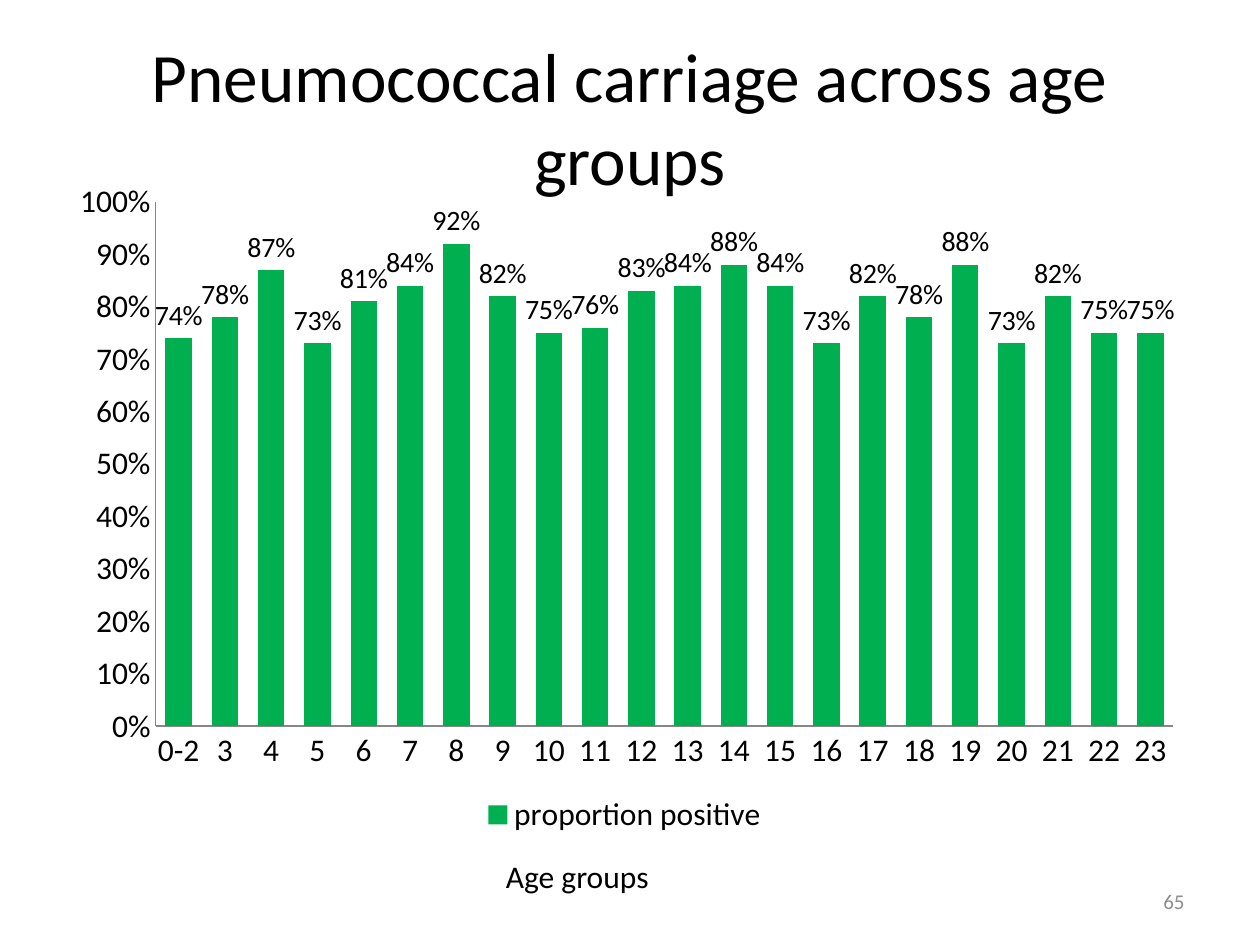
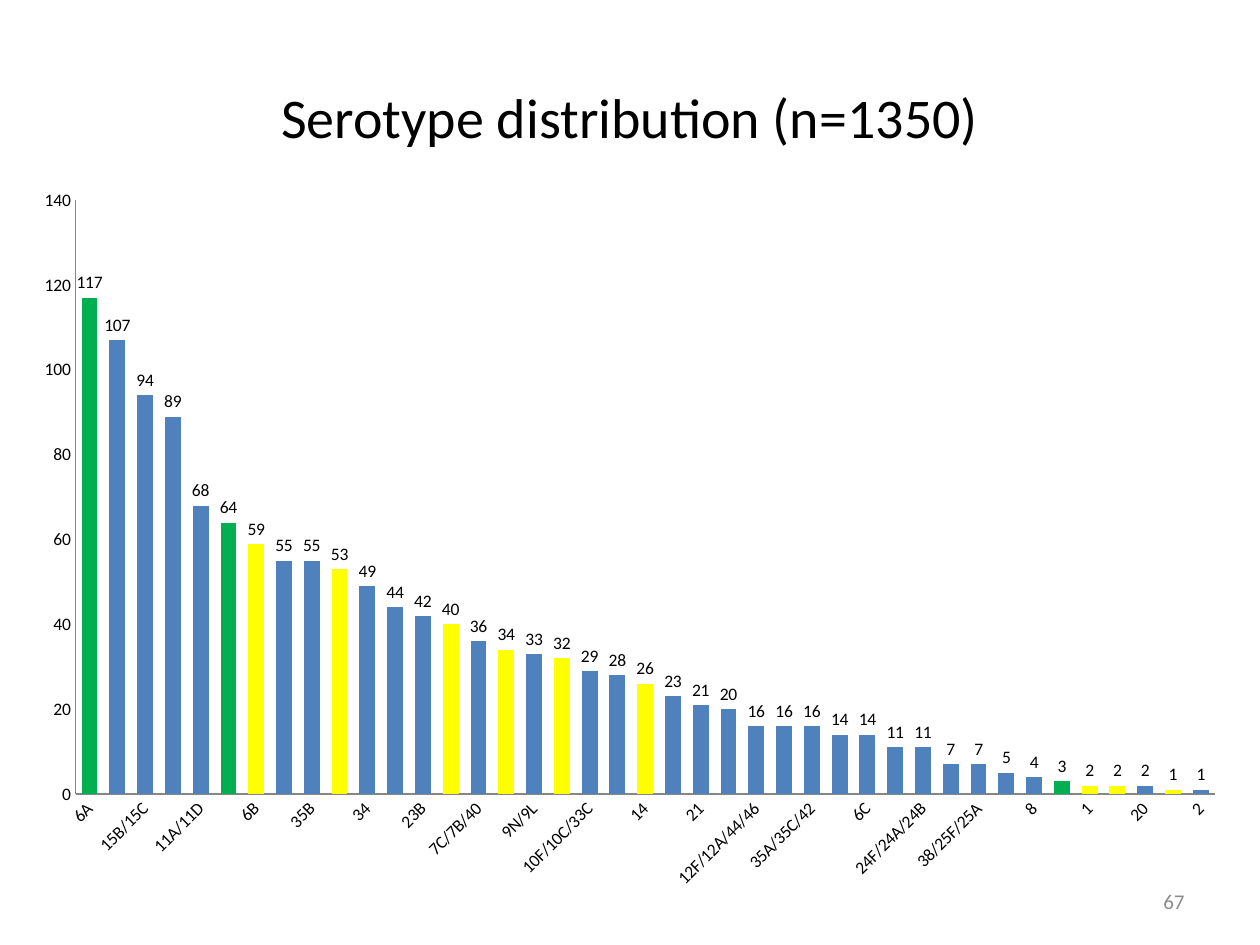
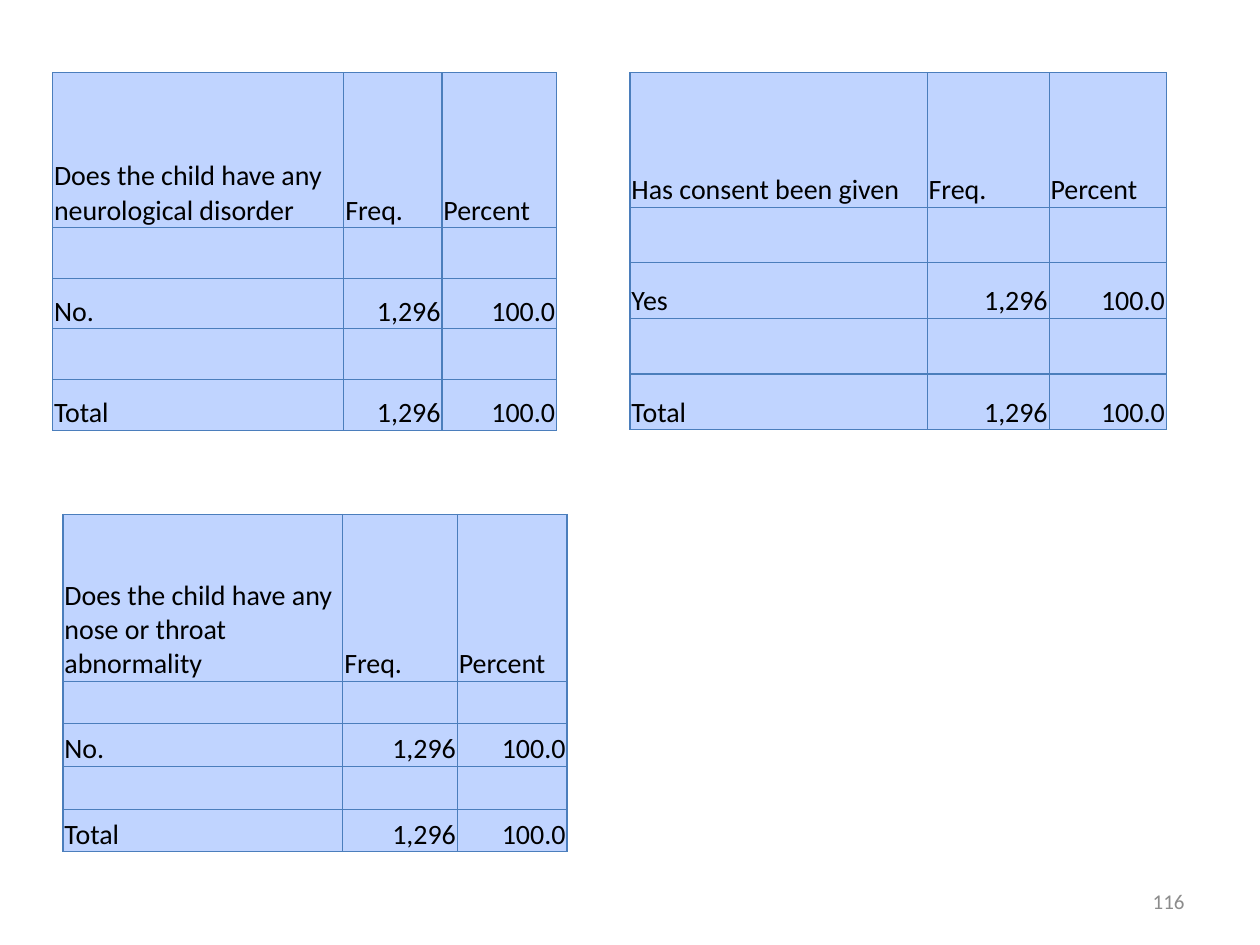
from dataclasses import dataclass, field

import pptx
import pptx.chart.data
import pptx.dml.color
import pptx.enum.chart
import pptx.enum.text
import pptx.oxml
import pptx.oxml.ns
import pptx.util
from pptx.util import Cm

FONT = "Calibri"
COLOURS = {
    "text": "000000",
    "page": "8C8C8C",
    "axis": "868686",
    "green": "00B050",
    "blue": "4F81BD",
    "yellow": "FFFF00",
    "cell": "C0D4FF",
    "border": "4B7EBC",
}
ALIGN = pptx.enum.text.PP_ALIGN
ANCHOR = pptx.enum.text.MSO_ANCHOR


@dataclass
class Box:
    """Left, top, width and height in centimetres."""
    left: float
    top: float
    width: float
    height: float

    def lengths(self) -> tuple:
        return Cm(self.left), Cm(self.top), Cm(self.width), Cm(self.height)


@dataclass
class BarChart:
    box: Box
    plot: Box  # fractions of the chart area
    series: str
    values: dict[str, float]
    colour: str
    size: int
    label_size: int
    maximum: float
    step: float
    number_format: str = "General"
    legend: bool = False
    slanted: bool = False
    highlights: dict[str, set[str]] = field(default_factory=dict)


@dataclass
class FrequencyTable:
    left: float
    top: float
    question: str
    answer: str
    columns: list[float]
    header_height: float
    row_height: float


TITLE_BOX = Box(1.27, 0.76, 22.86, 3.18)
PAGE_BOX = Box(18.21, 17.65, 5.92, 1.02)


def rgb(name: str) -> pptx.dml.color.RGBColor:
    return pptx.dml.color.RGBColor.from_string(COLOURS[name])


def set_font(font, size: float, colour: str = "text") -> None:
    font.name = FONT
    font.size = pptx.util.Pt(size)
    font.color.rgb = rgb(colour)


def add_text(slide, box: Box, text: str, size: float, colour: str = "text",
             align=ALIGN.LEFT, anchor=ANCHOR.MIDDLE, wrap: bool = True) -> None:
    frame = slide.shapes.add_textbox(*box.lengths()).text_frame
    frame.word_wrap = wrap
    frame.vertical_anchor = anchor
    paragraph = frame.paragraphs[0]
    paragraph.text = text
    paragraph.alignment = align
    set_font(paragraph.font, size, colour)


def add_slide(deck, page: int, title: str = "", title_size: float = 32):
    slide = deck.slides.add_slide(deck.slide_layouts[6])
    if title:
        add_text(slide, TITLE_BOX, title, title_size, align=ALIGN.CENTER)
    add_text(slide, PAGE_BOX, str(page), 12, "page", ALIGN.RIGHT)
    return slide


def set_plot_layout(chart, plot: Box) -> None:
    area = chart._chartSpace.chart.plotArea
    for old in area.findall(pptx.oxml.ns.qn("c:layout")):
        area.remove(old)
    places = zip("xywh", (plot.left, plot.top, plot.width, plot.height))
    area.insert(0, pptx.oxml.parse_xml(
        f'<c:layout {pptx.oxml.ns.nsdecls("c")}><c:manualLayout>'
        '<c:layoutTarget val="inner"/><c:xMode val="edge"/><c:yMode val="edge"/>'
        + "".join(f'<c:{key} val="{value}"/>' for key, value in places)
        + "</c:manualLayout></c:layout>"))


def slant_labels(axis) -> None:
    """Turn the category labels and show every second one."""
    body = axis.tick_labels.font._element.getparent().getparent().getparent()
    body.find(pptx.oxml.ns.qn("a:bodyPr")).set("rot", "-2700000")
    skip = pptx.oxml.parse_xml(
        f'<c:tickLblSkip {pptx.oxml.ns.nsdecls("c")} val="2"/>')
    axis._element.find(pptx.oxml.ns.qn("c:noMultiLvlLbl")).addprevious(skip)


def add_bar_chart(slide, bars: BarChart) -> None:
    data = pptx.chart.data.CategoryChartData(number_format=bars.number_format)
    data.categories = list(bars.values)
    data.add_series(bars.series, list(bars.values.values()))
    chart = slide.shapes.add_chart(
        pptx.enum.chart.XL_CHART_TYPE.COLUMN_CLUSTERED, *bars.box.lengths(), data).chart
    chart.has_title = False
    set_font(chart.font, bars.size)
    set_plot_layout(chart, bars.plot)
    chart.has_legend = bars.legend
    if bars.legend:
        chart.legend.position = pptx.enum.chart.XL_LEGEND_POSITION.BOTTOM
        chart.legend.include_in_layout = False

    # Axes
    for axis in (chart.category_axis, chart.value_axis):
        axis.has_major_gridlines = False
        axis.major_tick_mark = pptx.enum.chart.XL_TICK_MARK.NONE
        axis.format.line.color.rgb = rgb("axis")
        axis.format.line.width = pptx.util.Pt(0.75)
        set_font(axis.tick_labels.font, bars.size)
    chart.value_axis.minimum_scale = 0
    chart.value_axis.maximum_scale = bars.maximum
    chart.value_axis.major_unit = bars.step
    chart.value_axis.tick_labels.number_format = bars.number_format
    chart.value_axis.tick_labels.number_format_is_linked = False
    if bars.slanted:
        slant_labels(chart.category_axis)

    # Bars and their values
    plot = chart.plots[0]
    plot.gap_width = 75
    plot.vary_by_categories = False
    plot.has_data_labels = True
    labels = plot.data_labels
    labels.show_value = True
    labels.number_format = bars.number_format
    labels.number_format_is_linked = False
    labels.position = pptx.enum.chart.XL_LABEL_POSITION.OUTSIDE_END
    set_font(labels.font, bars.label_size)
    series = plot.series[0]
    series.invert_if_negative = False
    series.format.fill.solid()
    series.format.fill.fore_color.rgb = rgb(bars.colour)
    for colour, names in bars.highlights.items():
        for index, name in enumerate(bars.values):
            if name in names:
                fill = series.points[index].format.fill
                fill.solid()
                fill.fore_color.rgb = rgb(colour)


def style_cell(cell) -> None:
    cell.margin_left = cell.margin_right = cell.margin_top = Cm(0.03)
    cell.margin_bottom = 0
    cell.vertical_anchor = ANCHOR.BOTTOM
    properties = cell._tc.get_or_add_tcPr()
    for side in "LRTB":
        properties.append(pptx.oxml.parse_xml(
            f'<a:ln{side} {pptx.oxml.ns.nsdecls("a")} w="9525"><a:solidFill>'
            f'<a:srgbClr val="{COLOURS["border"]}"/></a:solidFill></a:ln{side}>'))
    cell.fill.solid()
    cell.fill.fore_color.rgb = rgb("cell")


def add_frequency_table(slide, spec: FrequencyTable) -> None:
    counts = ("1,296", "100.0")
    empty = ("", "", "")
    rows = [(spec.question, "Freq.", "Percent"), empty,
            (spec.answer, *counts), empty, ("Total", *counts)]
    heights = [spec.header_height] + [spec.row_height] * (len(rows) - 1)
    box = Box(spec.left, spec.top, sum(spec.columns), sum(heights))
    table = slide.shapes.add_table(len(rows), len(spec.columns), *box.lengths()).table
    for column, width in zip(table.columns, spec.columns):
        column.width = Cm(width)
    for r, (texts, height) in enumerate(zip(rows, heights)):
        table.rows[r].height = Cm(height)
        for c, text in enumerate(texts):
            cell = table.cell(r, c)
            style_cell(cell)
            paragraph = cell.text_frame.paragraphs[0]
            if text:
                paragraph.text = text
            paragraph.alignment = ALIGN.RIGHT if r and c else ALIGN.LEFT
            set_font(paragraph.font, 16)


# Content
AGES = ["0-2"] + [str(age) for age in range(3, 24)]
CARRIAGE = [0.74, 0.78, 0.87, 0.73, 0.81, 0.84, 0.92, 0.82, 0.75, 0.76, 0.83,
            0.84, 0.88, 0.84, 0.73, 0.82, 0.78, 0.88, 0.73, 0.82, 0.75, 0.75]
SEROTYPES = {
    "6A": 117, "non-typeable": 107, "15B/15C": 94, "10A": 89, "11A/11D": 68,
    "19A": 64, "6B": 59, "13": 55, "35B": 55, "23F": 53, "34": 49, "16F": 44,
    "23B": 42, "19F": 40, "7C/7B/40": 36, "18C/18F/18B/18A": 34, "9N/9L": 33,
    "9V/9A": 32, "10F/10C/33C": 29, "17F": 28, "14": 26, "6D": 23, "21": 21,
    "15F/15A": 20, "12F/12A/44/46": 16, "23A": 16, "35A/35C/42": 16,
    "33F/33A/37": 14, "6C": 14, "22F/22A": 11, "24F/24A/24B": 11, "35F/47F": 7,
    "38/25F/25A": 7, "31": 5, "8": 4, "3": 3, "1": 2, "4": 2, "20": 2, "5": 1, "2": 1,
}
SEROTYPE_GROUPS = {
    "green": {"6A", "19A", "3"},
    "yellow": {"6B", "23F", "19F", "18C/18F/18B/18A", "9V/9A", "14", "1", "4", "5"},
}
FREQUENCIES = [
    FrequencyTable(1.06, 1.47, "Does the child have any neurological disorder", "No.",
                   [5.87, 1.98, 2.31], 3.12, 1.02),
    FrequencyTable(1.27, 10.37, "Does the child have any nose or throat abnormality",
                   "No.", [5.64, 2.31, 2.21], 3.36, 0.86),
    FrequencyTable(12.7, 1.47, "Has consent been given", "Yes",
                   [5.99, 2.46, 2.36], 2.71, 1.12),
]


def main() -> None:
    deck = pptx.Presentation()
    deck.slide_width, deck.slide_height = Cm(25.4), Cm(19.05)

    # Carriage by age
    carriage = add_slide(deck, 65, "Pneumococcal carriage across age groups", 39.6)
    add_bar_chart(carriage, BarChart(
        Box(1.06, 3.39, 23.06, 13.55), Box(0.09, 0.05, 0.89, 0.78),
        "proportion positive", dict(zip(AGES, CARRIAGE)), "green",
        size=18, label_size=16, maximum=1, step=0.1, number_format="0%", legend=True))
    add_text(carriage, Box(9.95, 17.15, 3.59, 1.02), "Age groups", 18,
             anchor=ANCHOR.TOP, wrap=False)

    # Serotypes
    distribution = add_slide(deck, 67, "Serotype distribution (n=1350)")
    add_bar_chart(distribution, BarChart(
        Box(0.42, 3.6, 24.56, 14.6), Box(0.045, 0.03, 0.935, 0.82),
        "Series 1", SEROTYPES, "blue", size=10, label_size=10,
        maximum=140, step=20, slanted=True, highlights=SEROTYPE_GROUPS))

    # Frequency tables
    frequencies = add_slide(deck, 116)
    for spec in FREQUENCIES:
        add_frequency_table(frequencies, spec)

    deck.save("out.pptx")


if __name__ == "__main__":
    main()
